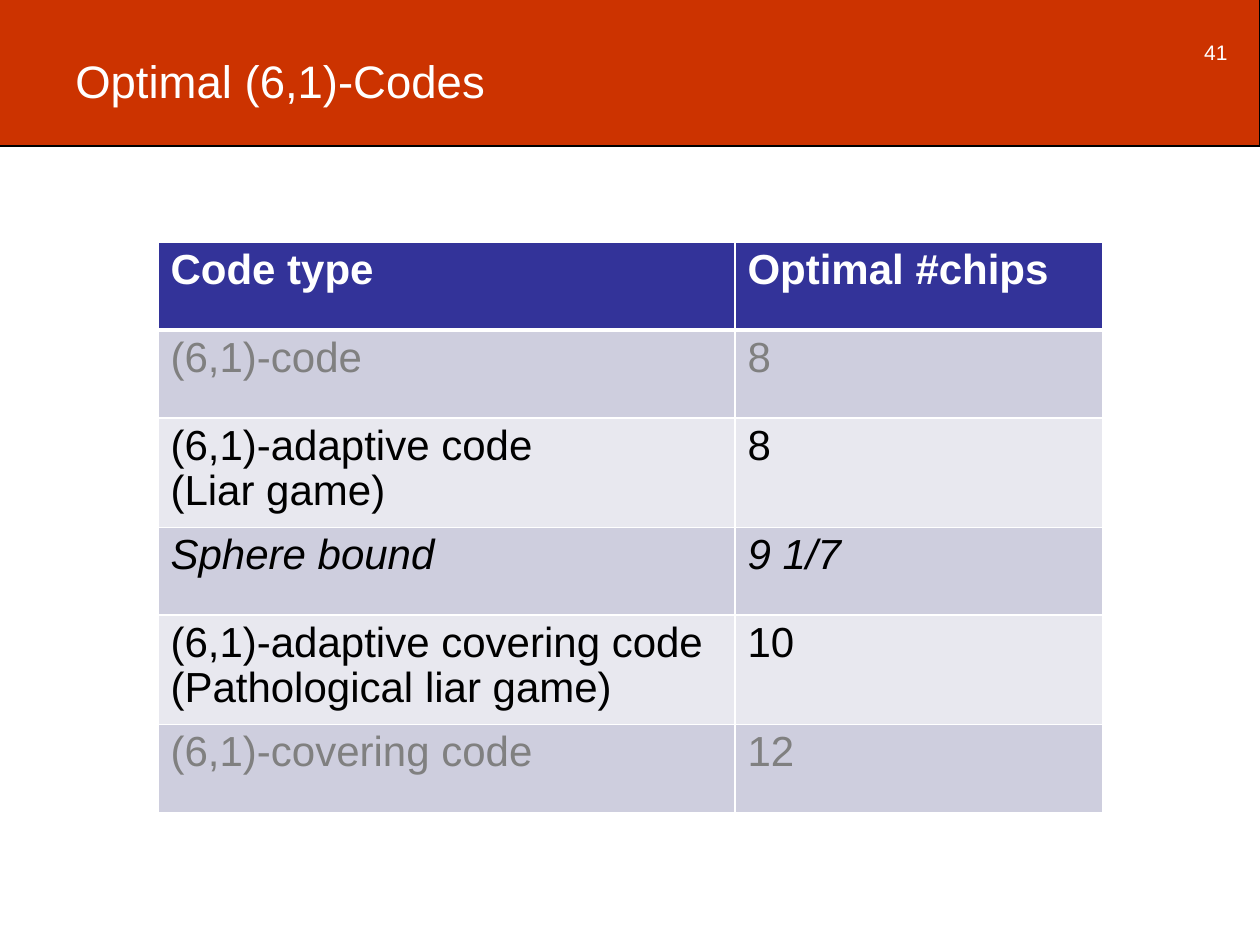
from lxml.etree import SubElement
from pptx import Presentation
from pptx.dml.color import RGBColor
from pptx.enum.shapes import MSO_SHAPE
from pptx.enum.text import MSO_ANCHOR, PP_ALIGN
from pptx.oxml.ns import qn
from pptx.util import Emu, Pt

PX_PER_INCH = 126
WHITE, BLACK, GREY = "FFFFFF", "000000", "808080"
RED, BLUE, BANDS = "CC3300", "333399", ("CECEDE", "E8E8EF")

COLUMN_WIDTHS = (577, 368)
ROW_HEIGHT = 88
ROWS = [
    ("Code type", "Optimal #chips", dict(color=WHITE, bold=True)),
    ("(6,1)-code", "8", dict(color=GREY)),
    ("(6,1)-adaptive code\n(Liar game)", "8", {}),
    ("Sphere bound", "9 1/7", dict(italic=True)),
    ("(6,1)-adaptive covering code\n(Pathological liar game)", "10", {}),
    ("(6,1)-covering code", "12", dict(color=GREY)),
]


def px(n):
    return Emu(round(n * 914400 / PX_PER_INCH))


def rgb(value):
    return RGBColor.from_string(value)


def write(tf, text, size=24, color=BLACK, bold=False, italic=False,
          align=PP_ALIGN.LEFT, spacing=None):
    """Fill a text frame, one paragraph for each line of text."""
    tf.word_wrap = True
    for i, line in enumerate(text.split("\n")):
        p = tf.add_paragraph() if i else tf.paragraphs[0]
        p.alignment = align
        if spacing:
            p.line_spacing = spacing
        r = p.add_run()
        r.text = line
        font = r.font
        font.name, font.size = "Arial", Pt(size)
        font.bold, font.italic = bold, italic
        font.color.rgb = rgb(color)


def add_text(s, x, y, w, h, text, anchor=MSO_ANCHOR.TOP, top=6, **fmt):
    tf = s.shapes.add_textbox(px(x), px(y), px(w), px(h)).text_frame
    write(tf, text, **fmt)
    tf.vertical_anchor = anchor
    tf.margin_top = px(top)


def add_header(s, x, y, w, h, title, number):
    bar = s.shapes.add_shape(MSO_SHAPE.RECTANGLE, px(x), px(y), px(w), px(h))
    bar.shadow.inherit = False
    bar.fill.solid()
    bar.fill.fore_color.rgb = rgb(RED)
    bar.line.color.rgb = rgb(BLACK)
    bar.line.width = Pt(0.75)
    add_text(s, x + 64, y + 43, 955, 126, title, top=11, size=26, color=WHITE)
    add_text(s, x + w - 73, y + 20, 53, 66, number, anchor=MSO_ANCHOR.MIDDLE,
             size=12, color=WHITE, align=PP_ALIGN.RIGHT)


def set_borders(cell, widths):
    """Draw white borders; widths maps a side (L, R, T, B) to points."""
    tc_pr = cell._tc.get_or_add_tcPr()
    for i, (side, width) in enumerate(widths.items()):
        ln = SubElement(tc_pr, qn(f"a:ln{side}"), w=str(Pt(width)))
        fill = SubElement(ln, qn("a:solidFill"))
        SubElement(fill, qn("a:srgbClr"), val=WHITE)
        tc_pr.insert(i, ln)


def add_code_table(s, x, y):
    frame = s.shapes.add_table(len(ROWS), len(COLUMN_WIDTHS), px(x), px(y),
                               px(sum(COLUMN_WIDTHS)), px(ROW_HEIGHT * len(ROWS)))
    table = frame.table
    for column, width in zip(table.columns, COLUMN_WIDTHS):
        column.width = px(width)
    for i, (*texts, fmt) in enumerate(ROWS):
        table.rows[i].height = px(ROW_HEIGHT)
        for j, text in enumerate(texts):
            cell = table.cell(i, j)
            write(cell.text_frame, text, spacing=0.96, **fmt)
            cell.fill.solid()
            cell.fill.fore_color.rgb = rgb(BANDS[(i - 1) % 2] if i else BLUE)
            set_borders(cell, dict(L=1, R=1, T=3 if i == 1 else 1,
                                   B=1 if i else 3))


def main():
    prs = Presentation()
    prs.slide_width, prs.slide_height = px(1260), px(945)
    s = prs.slides.add_slide(prs.slide_layouts[6])
    add_header(s, -1, -1, 1261, 147, "Optimal (6,1)-Codes", "41")
    add_code_table(s, 158, 242)
    prs.save("out.pptx")


if __name__ == "__main__":
    main()
